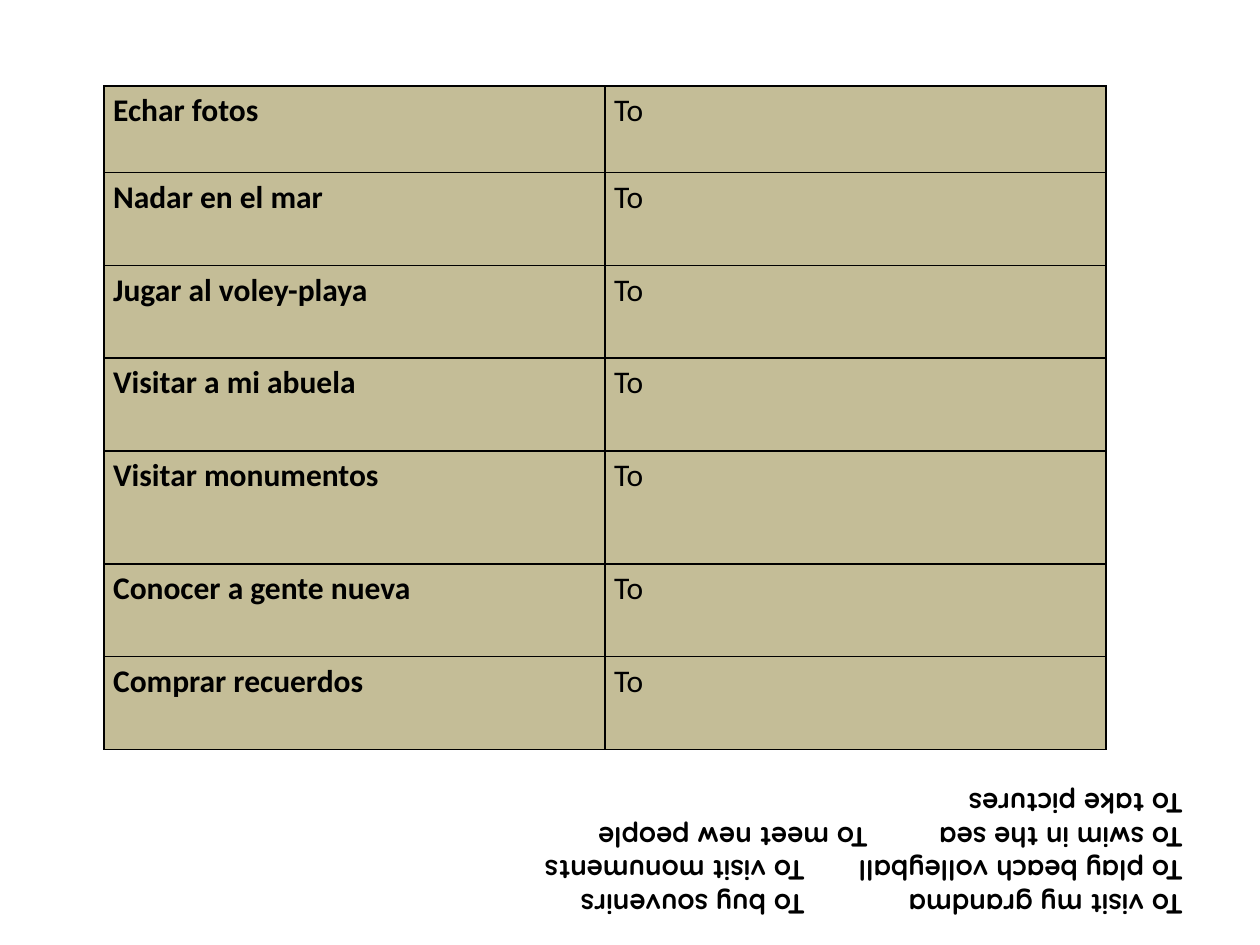
"""Build a Spanish to English holiday vocabulary slide with upside-down answers."""
import pptx
import pptx.dml.color
import pptx.oxml
import pptx.oxml.ns
import pptx.util
from pptx.util import Cm

BLACK = pptx.dml.color.RGBColor(0x00, 0x00, 0x00)
KHAKI = pptx.dml.color.RGBColor(0xC4, 0xBD, 0x97)

PHRASES = [
    ("Echar fotos", 1.75),
    ("Nadar en el mar", 1.87),
    ("Jugar al voley-playa", 1.87),
    ("Visitar a mi abuela", 1.87),
    ("Visitar monumentos", 2.28),
    ("Conocer a gente nueva", 1.87),
    ("Comprar recuerdos", 1.87),
]
ANSWERS = [
    "To visit my grandma\t\tTo buy souvenirs",
    "To play beach volleyball\tTo visit monuments",
    "To swim in the sea\t\tTo meet new people",
    "To take pictures",
]


def add_run(paragraph, text, font, size, bold):
    run = paragraph.add_run()
    run.text = text
    run.font.name = font
    run.font.size = pptx.util.Pt(size)
    run.font.bold = bold
    run.font.color.rgb = BLACK


def add_borders(cell):
    properties = cell._tc.get_or_add_tcPr()
    for position, side in enumerate(("lnL", "lnR", "lnT", "lnB")):
        properties.insert(position, pptx.oxml.parse_xml(
            f'<a:{side} {pptx.oxml.ns.nsdecls("a")} w="12700">'
            f'<a:solidFill><a:srgbClr val="{BLACK}"/></a:solidFill></a:{side}>'))


presentation = pptx.Presentation()
presentation.slide_width = Cm(25.4)
presentation.slide_height = Cm(19.05)
slide = presentation.slides.add_slide(presentation.slide_layouts[6])

total_height = sum(height for _, height in PHRASES)
vocabulary = slide.shapes.add_table(
    len(PHRASES), 2, Cm(2.1), Cm(1.73), Cm(20.2), Cm(total_height)).table
vocabulary.first_row = False
vocabulary.horz_banding = False
for column in vocabulary.columns:
    column.width = Cm(10.1)

for row, (spanish, height) in zip(vocabulary.rows, PHRASES):
    row.height = Cm(height)
    for cell, text, bold in zip(row.cells, (spanish, "To"), (True, False)):
        cell.margin_left = cell.margin_right = Cm(0.18)
        cell.margin_top = cell.margin_bottom = Cm(0)
        cell.fill.solid()
        cell.fill.fore_color.rgb = KHAKI
        add_borders(cell)
        entry = cell.text_frame.paragraphs[0]
        entry.line_spacing = 1.15
        add_run(entry, text, "Calibri", 18, bold)

answer_key = slide.shapes.add_textbox(Cm(1.7), Cm(15.72), Cm(22.4), Cm(3))
answer_key.rotation = 180
answers = answer_key.text_frame
answers.word_wrap = True
answers.auto_size = pptx.enum.text.MSO_AUTO_SIZE.SHAPE_TO_FIT_TEXT
for index, answer in enumerate(ANSWERS):
    line = answers.add_paragraph() if index else answers.paragraphs[0]
    add_run(line, answer, "Quicksand", 16, True)

presentation.save("out.pptx")
